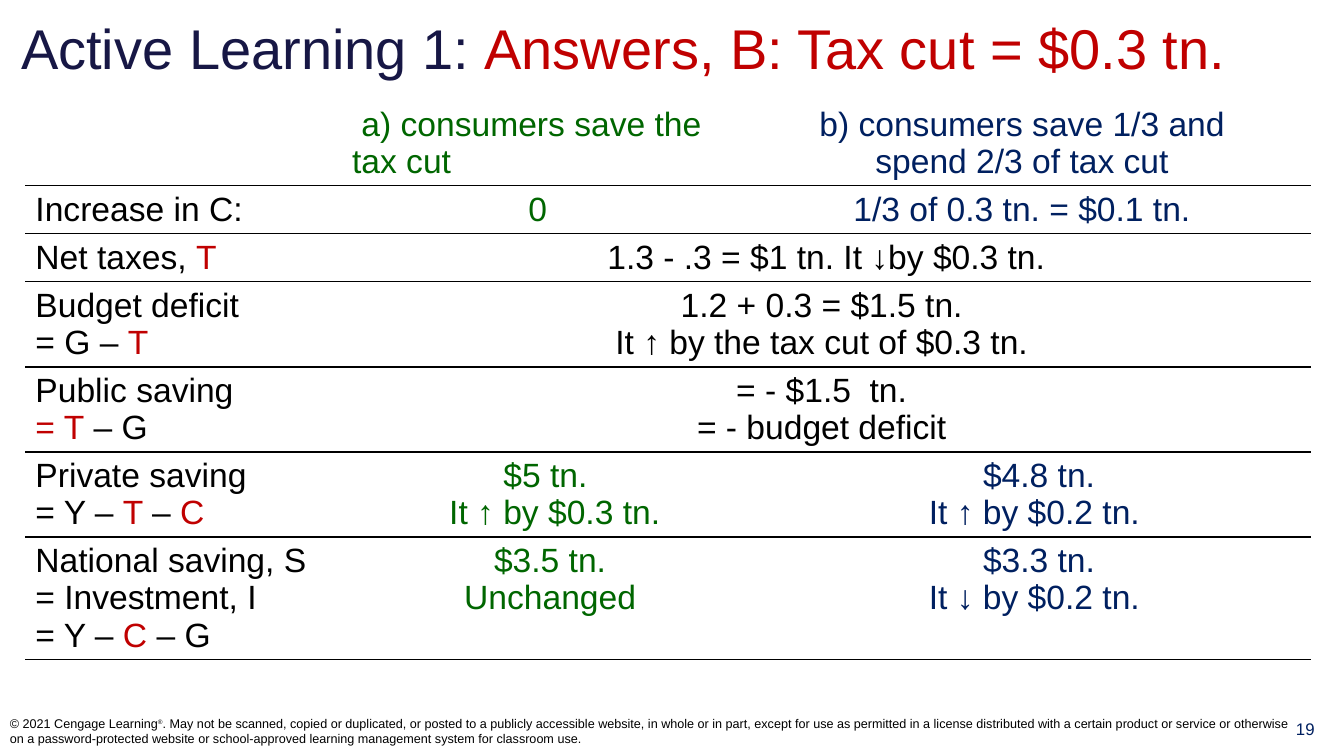
from dataclasses import dataclass

from lxml.etree import SubElement
from pptx import Presentation
from pptx.dml.color import RGBColor
from pptx.enum.text import MSO_ANCHOR as Anchor, MSO_AUTO_SIZE as AutoSize, PP_ALIGN as Align
from pptx.oxml import parse_xml
from pptx.oxml.ns import nsdecls, qn
from pptx.util import Cm, Pt


@dataclass(frozen=True)
class Theme:
    font: str = "Arial"
    title_size: int = 40
    table_size: int = 24
    number_size: int = 12
    notice_size: int = 9
    mark_size: int = 8
    title: str = "171745"
    black: str = "000000"
    red: str = "C00000"
    green: str = "006600"
    navy: str = "002060"


THEME = Theme()
NO_GRID_STYLE = "{2D5ABB26-0587-4C30-8999-92F81FD0307C}"


@dataclass(frozen=True)
class Entry:
    """A table cell; pieces of a line in braces are red."""
    column: int
    lines: tuple[str, ...]
    colour: str = THEME.black
    columns: int = 1
    align: Align = Align.CENTER


@dataclass(frozen=True)
class Row:
    height: float
    entries: tuple[Entry, ...]


def label(*lines: str) -> Entry:
    return Entry(0, lines, align=Align.LEFT)


def shared(*lines: str) -> Entry:
    return Entry(1, lines, columns=3)


def case_a(*lines: str, columns: int = 1, align: Align = Align.CENTER) -> Entry:
    return Entry(1, lines, THEME.green, columns, align)


def case_b(*lines: str, column: int = 3) -> Entry:
    return Entry(column, lines, THEME.navy, 4 - column)


COLUMN_WIDTHS = (7.98, 9.86, 0.86, 13.69)
ONE_LINE, TWO_LINES, THREE_LINES = 1.21, 2.14, 3.09
ROWS = (
    Row(TWO_LINES, (
        case_a(" a) consumers save the tax cut", align=Align.LEFT),
        case_b(" b) consumers save 1/3 and ", "spend 2/3 of tax cut", column=2))),
    Row(ONE_LINE, (
        label("Increase in C:"),
        case_a("0"),
        case_b("1/3 of 0.3 tn. = $0.1 tn.", column=2))),
    Row(ONE_LINE, (
        label("Net taxes, {T}"),
        shared("1.3 - .3 = $1 tn. It ↓by $0.3 tn."))),
    Row(TWO_LINES, (
        label("Budget deficit", "= G – {T}"),
        shared("1.2 + 0.3 = $1.5 tn. ", "It ↑ by the tax cut of $0.3 tn. "))),
    Row(TWO_LINES, (
        label("Public saving", "{= T} – G"),
        shared("= - $1.5  tn. ", "= - budget deficit "))),
    Row(TWO_LINES, (
        label("Private saving", "= Y – {T }– {C}"),
        case_a("$5 tn.  ", "It ↑ by $0.3 tn.", columns=2),
        case_b("$4.8 tn.", "It ↑ by $0.2 tn. "))),
    Row(THREE_LINES, (
        label("National saving, S", "= Investment, I", "= Y – {C }– G"),
        case_a("$3.5 tn. ", "Unchanged ", columns=2),
        case_b(" $3.3 tn. ", "It ↓ by $0.2 tn. "))),
)


def write_line(paragraph, line: str, size: int, colour: str, align: Align = Align.LEFT) -> None:
    paragraph.alignment = align
    paragraph.font.name = THEME.font
    paragraph.font.size = Pt(size)
    for index, piece in enumerate(line.replace("}", "{").split("{")):
        if piece:
            run = paragraph.add_run()
            run.text = piece
            run.font.color.rgb = RGBColor.from_string(THEME.red if index % 2 else colour)


def add_text(slide, left: float, top: float, width: float, height: float):
    frame = slide.shapes.add_textbox(Cm(left), Cm(top), Cm(width), Cm(height)).text_frame
    frame.word_wrap = True
    return frame


def rule_below(cell) -> None:
    cell.fill.background()
    properties = cell._tc.get_or_add_tcPr()
    properties.insert(0, parse_xml(
        f'<a:lnB {nsdecls("a")} w="{Pt(1)}"><a:solidFill>'
        f'<a:srgbClr val="{THEME.black}"/></a:solidFill></a:lnB>'))


def add_title(slide) -> None:
    title = slide.shapes.title
    title.left, title.top, title.width, title.height = Cm(0.28), Cm(0.28), Cm(33.02), Cm(1.83)
    frame = title.text_frame
    frame.auto_size = AutoSize.NONE
    frame.word_wrap = True
    frame.vertical_anchor = Anchor.MIDDLE
    write_line(frame.paragraphs[0], "Active Learning 1: {Answers, B: Tax cut = $0.3 tn.}",
               THEME.title_size, THEME.title)


def add_answers(slide) -> None:
    table = slide.shapes.add_table(
        len(ROWS), len(COLUMN_WIDTHS), Cm(0.64), Cm(2.54),
        Cm(sum(COLUMN_WIDTHS)), Cm(sum(row.height for row in ROWS))).table
    table.first_row = table.horz_banding = False
    properties = table._tbl.tblPr
    for style in properties.findall(qn("a:tableStyleId")):
        properties.remove(style)
    SubElement(properties, qn("a:tableStyleId")).text = NO_GRID_STYLE

    for column, width in zip(table.columns, COLUMN_WIDTHS):
        column.width = Cm(width)
    for index, row in enumerate(ROWS):
        table.rows[index].height = Cm(row.height)
        for cell in table.rows[index].cells:
            rule_below(cell)
        for entry in row.entries:
            cell = table.cell(index, entry.column)
            if entry.columns > 1:
                cell.merge(table.cell(index, entry.column + entry.columns - 1))
            frame = cell.text_frame
            for number, line in enumerate(entry.lines):
                paragraph = frame.add_paragraph() if number else frame.paragraphs[0]
                write_line(paragraph, line, THEME.table_size, entry.colour, entry.align)


def add_footer(slide) -> None:
    number = add_text(slide, 31.93, 17.98, 1.93, 1.04)
    write_line(number.paragraphs[0], "19", THEME.number_size, THEME.navy, Align.CENTER)

    notice = add_text(slide, 0, 17.78, 33.02, 1.27)
    notice.vertical_anchor = Anchor.MIDDLE
    paragraph = notice.paragraphs[0]
    write_line(paragraph, "© 2021 Cengage Learning", THEME.notice_size, THEME.black)
    mark = paragraph.add_run()
    mark.text = "®"
    mark.font.size = Pt(THEME.mark_size)
    mark.font._element.set("baseline", "30000")
    write_line(paragraph, ". May not be scanned, copied or duplicated, or posted to a publicly "
               "accessible website, in whole or in part, except for use as permitted in a license "
               "distributed with a certain product or service or otherwise on a password-protected "
               "website or school-approved learning management system for classroom use.",
               THEME.notice_size, THEME.black)


def main() -> None:
    presentation = Presentation()
    presentation.slide_width, presentation.slide_height = Cm(33.87), Cm(19.05)
    slide = presentation.slides.add_slide(presentation.slide_layouts[5])
    add_title(slide)
    add_answers(slide)
    add_footer(slide)
    presentation.save("out.pptx")


if __name__ == "__main__":
    main()
